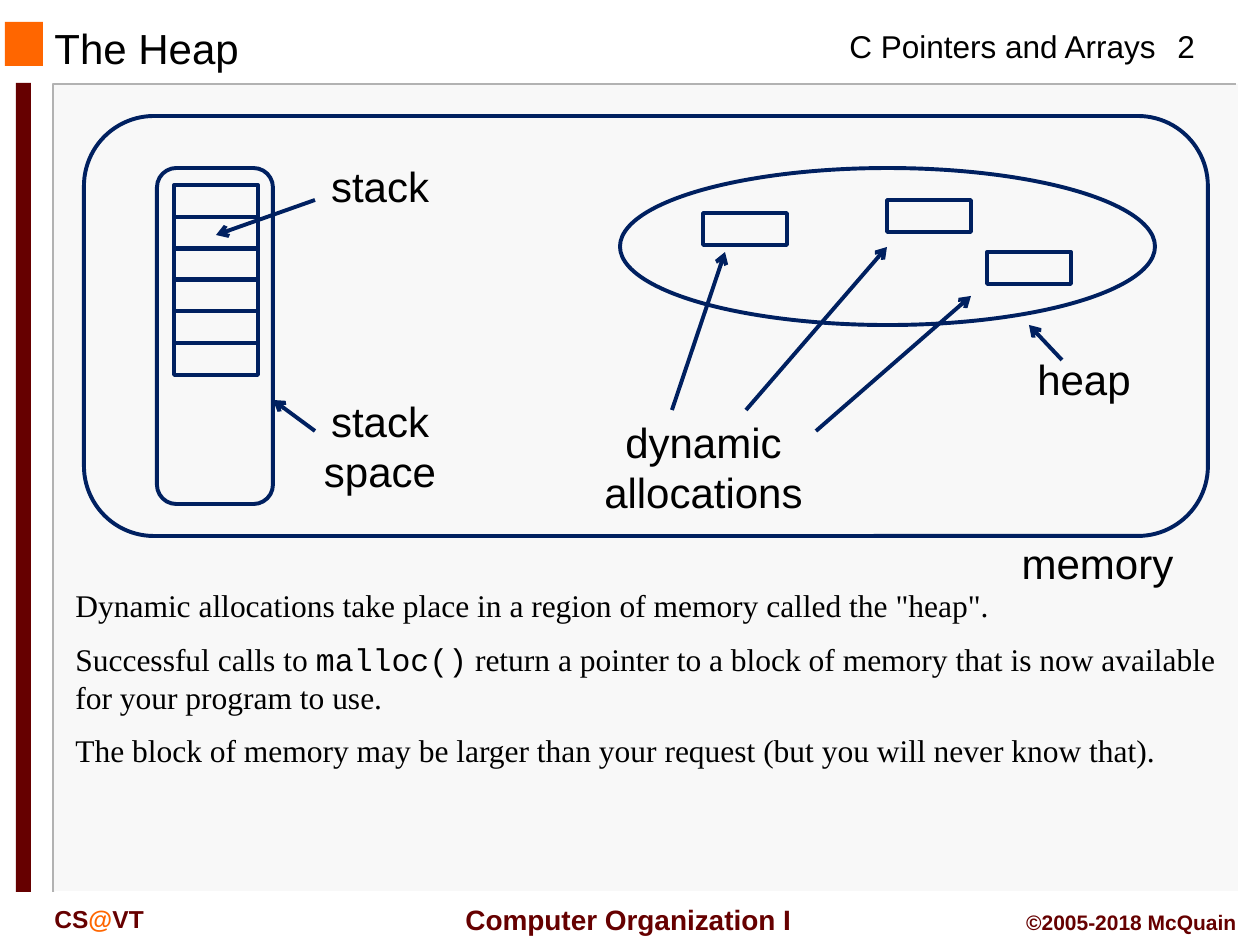
from lxml.etree import SubElement
from pptx import Presentation
from pptx.dml.color import RGBColor
from pptx.enum.shapes import MSO_CONNECTOR as Connector, MSO_SHAPE as Preset
from pptx.enum.text import MSO_ANCHOR as Anchor, PP_ALIGN as Align
from pptx.oxml.ns import qn
from pptx.util import Emu, Pt

PX = 914400 / 126
NAVY, MAROON, ORANGE = "002060", "660000", "FF6600"
BLACK, WHITE, PALE, GREY = "000000", "FFFFFF", "F8F8F8", "B2B2B2"


def px(value):
    return Emu(round(value * PX))


def color(value):
    return RGBColor.from_string(value)


class Diagram:
    stroke = 2.25
    body_font = "Arial"

    def __init__(self, slide):
        self.slide = slide
        self.shapes = slide.shapes

    def style(self, shape, fill=None, line=None, width=stroke):
        shape.shadow.inherit = False
        if fill:
            shape.fill.solid()
            shape.fill.fore_color.rgb = color(fill)
        else:
            shape.fill.background()
        if line:
            shape.line.color.rgb = color(line)
            shape.line.width = Pt(width)
        else:
            shape.line.fill.background()

    def block(self, *box, fill):
        shape = self.shapes.add_shape(Preset.RECTANGLE, *map(px, box))
        self.style(shape, fill=fill)

    def outline(self, *box, preset=Preset.RECTANGLE):
        shape = self.shapes.add_shape(preset, *map(px, box))
        self.style(shape, line=NAVY)

    def edge(self, points, line):
        start, *rest = points
        builder = self.shapes.build_freeform(*start, scale=PX)
        builder.add_line_segments(rest, close=False)
        self.style(builder.convert_to_shape(), line=line, width=1)

    def arrow(self, *ends):
        connector = self.shapes.add_connector(Connector.STRAIGHT, *map(px, ends))
        connector.line.color.rgb = color(NAVY)
        connector.line.width = Pt(self.stroke)
        SubElement(connector.line._get_or_add_ln(), qn("a:tailEnd"), type="arrow")
        SubElement(connector._element.spPr, qn("a:effectLst"))

    def text(self, box, *paragraphs, size=24, align=Align.LEFT,
             anchor=Anchor.TOP, wrap=True, gap=0, **font):
        frame = self.shapes.add_textbox(*map(px, box)).text_frame
        for name, value in {"word_wrap": wrap, "vertical_anchor": anchor}.items():
            setattr(frame, name, value)
        for index, runs in enumerate(paragraphs):
            paragraph = frame.add_paragraph() if index else frame.paragraphs[0]
            paragraph.alignment = align
            if index:
                paragraph.space_before = Pt(gap)
            for run in [runs] if isinstance(runs, str) else runs:
                self.run(paragraph, run, size, font)

    def run(self, paragraph, content, size, font):
        words, changes = (content, {}) if isinstance(content, str) else content
        run = paragraph.add_run()
        run.text = words
        values = {"name": self.body_font, "bold": False, "ink": BLACK, **font, **changes}
        run.font.color.rgb = color(values.pop("ink"))
        run.font.size = Pt(size)
        for name, value in values.items():
            setattr(run.font, name, value)

    def label(self, words, *box):
        self.text(box, words, align=Align.CENTER)


def draw_frame(diagram):
    diagram.block(54, 84, 1184, 808, fill=PALE)
    diagram.edge([(1236, 84), (53, 84), (53, 892)], GREY)
    diagram.edge([(1239, 84), (1239, 892), (55, 892)], WHITE)
    diagram.block(5, 22, 38, 44, fill=ORANGE)
    diagram.block(16, 83, 15, 809, fill=MAROON)
    diagram.text((837, 21, 335, 50), "C Pointers and Arrays", size=18, wrap=False)
    diagram.text((1144, 21, 84, 50), "2", size=18, align=Align.CENTER)
    footer = {"bold": True, "ink": MAROON}
    diagram.text((441, 896, 367, 47), " Computer Organization I", size=16,
                 align=Align.CENTER, anchor=Anchor.MIDDLE, wrap=False, **footer)
    diagram.text((42, 898, 189, 42), ["CS", ("@", {"ink": ORANGE}), "VT"], size=14, **footer)
    diagram.text((987, 903, 262, 38), "©2005-2018 McQuain", size=12,
                 align=Align.RIGHT, **footer)
    diagram.text((42, 24, 798, 48), "The Heap", anchor=Anchor.MIDDLE)


def draw_memory(diagram):
    cell_width, cell_height = 84, 32
    diagram.outline(84, 116, 1124, 420, preset=Preset.ROUNDED_RECTANGLE)
    diagram.outline(157, 168, 116, 336, preset=Preset.ROUNDED_RECTANGLE)
    diagram.outline(620, 168, 535, 157, preset=Preset.OVAL)
    stack_cells = [(174, 185 + round(31.5 * row)) for row in range(6)]
    heap_blocks = [(703, 213), (987, 252), (887, 200)]
    for left, top in stack_cells + heap_blocks:
        diagram.outline(left, top, cell_width, cell_height)

    diagram.label("stack", 294, 154, 172, 63)
    diagram.label("stack space", 294, 389, 172, 115)
    diagram.label("heap", 998, 347, 172, 63)
    diagram.label("dynamic allocations", 565, 410, 277, 115)
    diagram.label("memory", 998, 531, 199, 63)

    for ends in [(315, 200, 216, 235), (315, 431, 273, 400), (1062, 360, 1029, 325),
                 (672, 410, 725, 252), (746, 410, 887, 247), (816, 431, 971, 296)]:
        diagram.arrow(*ends)


def main():
    presentation = Presentation()
    presentation.slide_width, presentation.slide_height = px(1260), px(945)
    diagram = Diagram(presentation.slides.add_slide(presentation.slide_layouts[6]))
    draw_frame(diagram)
    draw_memory(diagram)
    diagram.text(
        (63, 580, 1166, 204),
        'Dynamic allocations take place in a region of memory called the "heap".',
        ["Successful calls to ", ("malloc()", {"name": "Courier New"}),
         " return a pointer to a block of memory that is now available for your program to use."],
        "The block of memory may be larger than your request (but you will never know that).",
        size=18, gap=9, name="Times New Roman")
    presentation.save("out.pptx")


if __name__ == "__main__":
    main()
